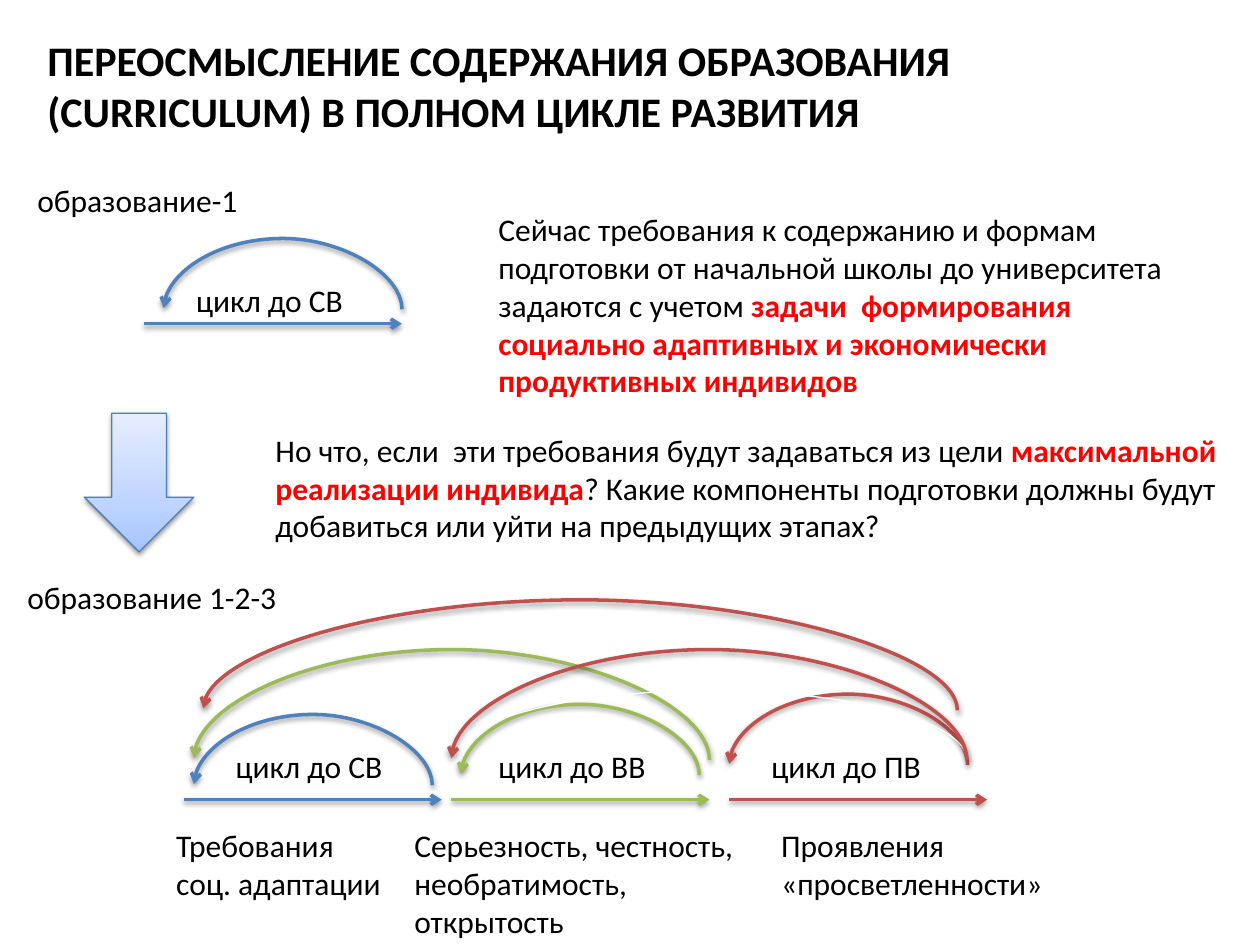
from copy import deepcopy
from typing import NamedTuple

from pptx import Presentation
from pptx.dml.color import RGBColor
from pptx.enum.shapes import MSO_CONNECTOR, MSO_SHAPE
from pptx.enum.text import MSO_ANCHOR
from pptx.oxml import parse_xml
from pptx.oxml.ns import nsdecls, qn
from pptx.util import Pt

COLORS = {
    "black": "000000", "white": "FFFFFF", "accent": "FF0000",
    "blue": "4F81BD", "green": "9BBB59", "red": "C0504D", "outline": "4B7EBC",
}
ARROW_STOPS = [(0, "A4C4FF"), (0.35, "BFD4FF"), (1, "E6EEFF")]
CYCLE_LENGTH = 147.4
LOOP_RISE = 57.107  # height of a loop, as a multiple of its end offset
END_OFFSET = 0.0138  # end offset of a loop, as a share of its arc height


class Label(NamedTuple):
    x: float
    y: float
    w: float
    h: float
    runs: list  # plain and highlighted runs alternate
    wrap: bool = True


class Cycle(NamedTuple):
    x: float
    y: float
    color: str


class Loop(NamedTuple):
    x: float
    y: float
    w: float
    h: float
    color: str


CYCLES = [Cycle(82.2, 185, "blue"), Cycle(105, 457, "blue"),
          Cycle(258, 457, "green"), Cycle(416.7, 457, "red")]
BACK_LOOPS = [
    Loop(93.6, 151.2, 136.1, 51, "blue"),
    Loop(110.9, 423.2, 136.1, 51, "blue"),
    Loop(110.9, 394.6, 294.5, 79.4, "green"),
    Loop(116.2, 366.2, 430.9, 79.4, "red"),
]
FRONT_LOOPS = [
    Loop(263.5, 417.4, 136.1, 51, "green"),
    Loop(416.8, 411.6, 136.1, 51, "red"),
    Loop(258, 394.6, 294.5, 79.4, "red"),
]
TITLE = Label(20, 3.6, 648, 90, [
    "ПЕРЕОСМЫСЛЕНИЕ СОДЕРЖАНИЯ ОБРАЗОВАНИЯ (CURRICULUM) В ПОЛНОМ ЦИКЛЕ РАЗВИТИЯ"])
LABELS = [
    Label(277.7, 116.6, 425.5, 116.6, [
        "Сейчас требования к содержанию и формам подготовки от начальной школы "
        "до университета задаются с учетом ",
        "задачи  формирования социально адаптивных и экономически продуктивных индивидов"]),
    Label(93.6, 468.7, 164, 51, ["Требования\nсоц. адаптации"]),
    Label(229.7, 468.7, 198.7, 72.7, ["Серьезность, честность, необратимость, открытость"]),
    Label(439.3, 468.7, 164, 51, ["Проявления «просветленности»"]),
    Label(105, 157, 99.4, 29, ["цикл до СВ"], False),
    Label(127.5, 423.4, 99.4, 29, ["цикл до СВ"], False),
    Label(277.7, 423.4, 99.4, 29, ["цикл до ВВ"], False),
    Label(433.7, 423.4, 100.8, 29, ["цикл до ПВ"], False),
    Label(150.3, 242.6, 589.7, 72.7, [
        "Но что, если  эти требования будут задаваться из цели",
        " максимальной реализации индивида",
        "? Какие компоненты подготовки должны будут добавиться или уйти на "
        "предыдущих этапах?"]),
    Label(14.2, 100.1, 130.3, 29, ["образование-1"], False),
    Label(8.6, 326.9, 158.4, 29, ["образование 1-2-3"], False),
]


def rgb(name: str) -> RGBColor:
    return RGBColor.from_string(COLORS[name])


def add_shadow(sp) -> None:
    spPr = sp._element.spPr
    for old in spPr.findall(qn("a:effectLst")):
        spPr.remove(old)
    spPr.append(parse_xml(
        f'<a:effectLst {nsdecls("a")}><a:outerShdw blurRad="{Pt(3.1)}" dist="{Pt(1.6)}" '
        'dir="5400000" rotWithShape="0"><a:srgbClr val="000000"><a:alpha val="38000"/>'
        '</a:srgbClr></a:outerShdw></a:effectLst>'))


def style_arrow_line(c, color: str) -> None:
    c.line.color.rgb = rgb(color)
    c.line.width = Pt(2)
    c.line._get_or_add_ln().append(parse_xml(f'<a:tailEnd {nsdecls("a")} type="arrow"/>'))
    add_shadow(c)


def draw_cycle(shapes, cycle: Cycle) -> None:
    x, y = Pt(cycle.x), Pt(cycle.y)
    c = shapes.add_connector(MSO_CONNECTOR.STRAIGHT, x, y, x + Pt(CYCLE_LENGTH), y)
    style_arrow_line(c, cycle.color)


def draw_loop(shapes, loop: Loop) -> None:
    # Thin white arc
    sp = shapes.add_shape(MSO_SHAPE.ARC, *(Pt(v) for v in loop[:4]))
    sp.adjustments[0], sp.adjustments[1] = 108.307, 0
    sp.fill.background()
    sp.line.color.rgb = rgb("white")
    sp.line.width = Pt(0.75)
    sp.shadow.inherit = False

    # Curved return arrow, laid out upright and turned a quarter
    offset = loop.h * END_OFFSET
    cx, cy = loop.x + loop.w / 2, loop.y + (loop.h - offset) / 2
    c = shapes.add_connector(
        MSO_CONNECTOR.CURVE, Pt(cx + offset / 2), Pt(cy - loop.w / 2),
        Pt(cx - offset / 2), Pt(cy + loop.w / 2))
    spPr = c._element.spPr
    spPr.find(qn("a:xfrm")).set("rot", "5400000")
    geom = spPr.find(qn("a:prstGeom"))
    for old in geom.findall(qn("a:avLst")):
        geom.remove(old)
    geom.append(parse_xml(
        f'<a:avLst {nsdecls("a")}><a:gd name="adj1" '
        f'fmla="val {round(LOOP_RISE * 100000)}"/></a:avLst>'))
    style_arrow_line(c, loop.color)


def draw_label(shapes, label: Label, size: float = 18, bold: bool = False):
    tf = shapes.add_textbox(*(Pt(v) for v in label[:4])).text_frame
    tf.word_wrap = label.wrap
    p = tf.paragraphs[0]
    for i, text in enumerate(label.runs):
        marked = i % 2 == 1
        font = {"name": "Calibri", "size": Pt(size), "bold": bold or marked}
        for j, line in enumerate(text.split("\n")):
            if j:
                p.add_line_break()
            r = p.add_run()
            r.text = line
            for key, value in font.items():
                setattr(r.font, key, value)
            r.font.color.rgb = rgb("accent" if marked else "black")
    return tf


def draw_down_arrow(shapes) -> None:
    sp = shapes.add_shape(MSO_SHAPE.DOWN_ARROW, Pt(48.2), Pt(236.2), Pt(62.6), Pt(79.2))
    sp.fill.gradient()
    sp.fill.gradient_angle = 90
    first = sp.fill._xPr.find(qn("a:gradFill")).find(qn("a:gsLst"))[0]
    first.addnext(deepcopy(first))
    for stop, (position, color) in zip(sp.fill.gradient_stops, ARROW_STOPS):
        stop.position = position
        stop.color.rgb = RGBColor.from_string(color)
    sp.line.color.rgb = rgb("outline")
    sp.line.width = Pt(0.75)
    add_shadow(sp)


def main() -> None:
    prs = Presentation()
    prs.slide_width, prs.slide_height = Pt(720), Pt(540)
    shapes = prs.slides.add_slide(prs.slide_layouts[6]).shapes

    # Title
    draw_label(shapes, TITLE, 24, True).vertical_anchor = MSO_ANCHOR.MIDDLE

    # Cycles with their loops, and the step between the two schemes
    for cycle in CYCLES:
        draw_cycle(shapes, cycle)
    for loop in BACK_LOOPS:
        draw_loop(shapes, loop)
    draw_down_arrow(shapes)

    # Loops of the later cycles lie over the earlier ones
    for loop in FRONT_LOOPS:
        draw_loop(shapes, loop)

    # Captions and explanations
    for label in LABELS:
        draw_label(shapes, label)

    prs.save("out.pptx")


if __name__ == "__main__":
    main()
